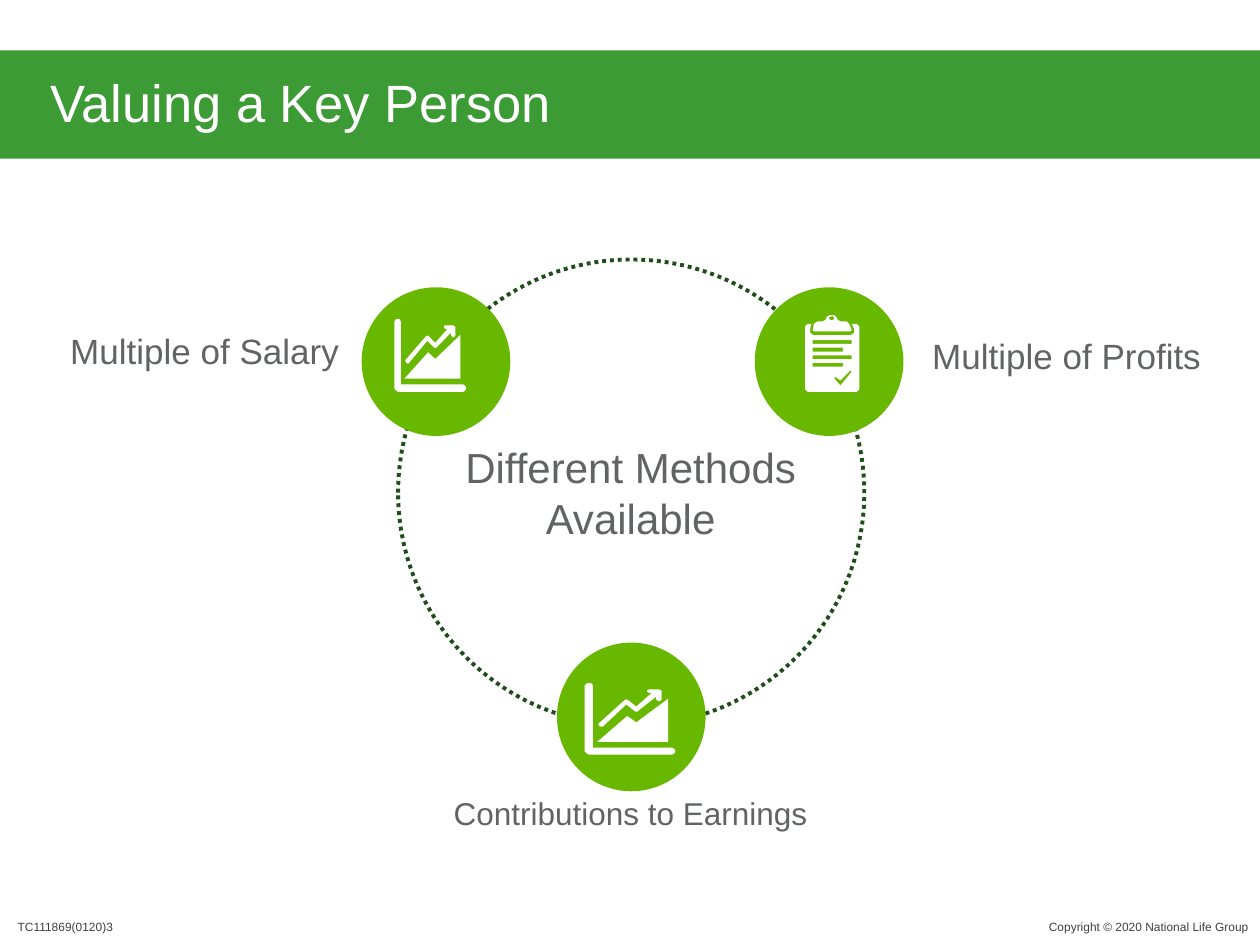
from dataclasses import dataclass

from pptx import Presentation
from pptx import util as u
from pptx.dml import color
from pptx.enum import dml, shapes, text


@dataclass(frozen=True)
class Theme:
    font: str = "Arial"
    banner: str = "3D9B35"
    ring: str = "1F4E1A"
    badge: str = "69B800"
    white: str = "FFFFFF"
    body: str = "616365"
    footer: str = "3F403C"
    title_size: float = 30
    centre_size: float = 24
    label_size: float = 20
    small_label_size: float = 18
    footer_size: float = 6.8


LEFT, CENTRE, RIGHT = text.PP_ALIGN.LEFT, text.PP_ALIGN.CENTER, text.PP_ALIGN.RIGHT
BADGE = 1.18

CHART_GRID = (100, 100)
AXES = [(0, 4), (2, 1), (5, 0), (8, 1), (9, 4), (9, 90), (96, 90), (99, 92),
        (100, 95), (99, 98), (96, 100), (5, 100), (2, 98), (0, 95)]
AREA = [(92, 22), (92, 82), (14, 82), (47, 46), (57, 55)]
TREND = [(71, 9), (82, 9), (85, 11), (85, 23), (82, 26), (79, 23), (79, 19),
         (58, 40), (56, 40), (46, 30), (20, 61), (17, 61), (15, 57), (44, 24),
         (46, 23), (48, 24), (57, 33), (74, 14), (71, 14), (69, 12), (69, 10)]
CHART = [[AXES], [AREA], [TREND]]

CLIPBOARD_GRID = (43, 61)
BOARD = [(41, 7), (37, 7), (39, 11), (39, 14), (38, 15), (36, 16), (7, 16), (5, 15),
         (4, 14), (4, 11), (5, 7), (2, 7), (0, 9), (0, 59), (2, 61), (41, 61),
         (43, 59), (43, 9)]
TEXT_LINES = [[(6, y), (end, y), (end, y + 3), (6, y + 3)]
              for y, end in zip(range(20, 44, 6), (37, 30, 37, 30))]
TICK = [(28, 56), (23, 50), (24, 49), (28, 52), (36, 44), (37, 45)]
CLIP = [(7, 13), (36, 13), (37, 12), (35, 7), (33, 5), (28, 5), (26, 4), (25, 2),
        (23, 0), (19, 0), (17, 2), (16, 4), (14, 5), (10, 5), (7, 7), (6, 12)]
CLIP_HOLE = [(21, 1), (22, 1), (23, 2), (23, 3), (22, 4), (20, 4), (19, 3), (19, 2)]
CLIPBOARD = [[BOARD, *TEXT_LINES, TICK, CLIP, CLIP_HOLE]]


def apply(target, values):
    """Set each named value on the target."""
    for name, value in values.items():
        setattr(target, name, value)


def inches(*lengths):
    """Convert lengths in inches to slide units."""
    return [u.Inches(length) for length in lengths]


class Deck:
    """Hold the theme and the current slide and draw its elements."""

    def __init__(self, theme):
        """Open a blank presentation with one title slide."""
        self.theme = theme
        self.show = Presentation()
        apply(self.show, {"slide_width": u.Inches(10), "slide_height": u.Inches(7.5)})
        self.slide = self.show.slides.add_slide(self.show.slide_layouts[5])
        self.canvas = self.slide.shapes

    def style(self, paragraph, size, ink, align=LEFT):
        """Format one paragraph."""
        paragraph.alignment = align
        apply(paragraph.font, {"name": self.theme.font, "size": u.Pt(size)})
        paragraph.font.color.rgb = color.RGBColor.from_string(ink)

    def fill(self, shape, ink):
        """Give a shape a plain fill without line or shadow."""
        shape.shadow.inherit = False
        shape.fill.solid()
        shape.fill.fore_color.rgb = color.RGBColor.from_string(ink)
        shape.line.fill.background()

    def title(self, wording, box):
        """Turn the title placeholder into a banner."""
        banner = self.slide.shapes.title
        apply(banner, dict(zip(("left", "top", "width", "height"), inches(*box))))
        self.fill(banner, self.theme.banner)
        frame = banner.text_frame
        frame.text = wording
        across, down = inches(0.4, 0.2)
        apply(frame, {"margin_left": across, "margin_right": across,
                      "margin_top": down, "margin_bottom": down, "word_wrap": True,
                      "auto_size": text.MSO_AUTO_SIZE.NONE,
                      "vertical_anchor": text.MSO_ANCHOR.BOTTOM})
        heading = frame.paragraphs[0]
        heading.line_spacing = 0.9
        self.style(heading, self.theme.title_size, self.theme.white)

    def label(self, wording, box, size, align=LEFT, wrap=True):
        """Add a body label centred vertically in its box."""
        frame = self.canvas.add_textbox(*inches(*box)).text_frame
        frame.text = wording
        apply(frame, {"word_wrap": wrap, "vertical_anchor": text.MSO_ANCHOR.MIDDLE})
        for paragraph in frame.paragraphs:
            self.style(paragraph, size, self.theme.body, align)

    def footer(self, wording, box, align=LEFT):
        """Add a small footer line without margins."""
        frame = self.canvas.add_textbox(*inches(*box)).text_frame
        frame.text = wording
        sides = ("left", "right", "top", "bottom")
        apply(frame, {f"margin_{side}": 0 for side in sides})
        frame.word_wrap = True
        self.style(frame.paragraphs[0], self.theme.footer_size, self.theme.footer, align)

    def ring(self, left, top, size):
        """Add the dotted circle that joins the badges."""
        circle = self.canvas.add_shape(shapes.MSO_SHAPE.OVAL, *inches(left, top, size, size))
        circle.shadow.inherit = False
        circle.fill.background()
        circle.line.color.rgb = color.RGBColor.from_string(self.theme.ring)
        apply(circle.line, {"width": u.Pt(2.25), "dash_style": dml.MSO_LINE.ROUND_DOT})

    def icon(self, pieces, grid, box):
        """Draw white outlines given on a grid scaled to a box."""
        left, top, width, height = box
        for contours in pieces:
            placed = [[inches(left + x * width / grid[0], top + y * height / grid[1])
                       for x, y in contour] for contour in contours]
            outline = self.canvas.build_freeform(*placed[0][0])
            for number, (start, *rest) in enumerate(placed):
                if number:
                    outline.move_to(*start)
                outline.add_line_segments(rest, close=True)
            self.fill(outline.convert_to_shape(), self.theme.white)

    def method(self, label, badge, icon):
        """Group a label, a round badge and its icon."""
        self.canvas = self.slide.shapes.add_group_shape().shapes
        self.label(**label)
        circle = self.canvas.add_shape(shapes.MSO_SHAPE.OVAL, *inches(*badge, BADGE, BADGE))
        self.fill(circle, self.theme.badge)
        self.icon(*icon)
        self.canvas = self.slide.shapes


def main():
    """Build the slide and save it."""
    theme = Theme()
    deck = Deck(theme)
    deck.title("Valuing a Key Person", (0, 0.4, 10, 0.86))
    deck.footer("TC111869(0120)3", (0.14, 7.3, 1.04, 0.11))
    deck.footer("Copyright © 2020 National Life Group", (7.66, 7.3, 2.25, 0.11), RIGHT)
    deck.ring(3.16, 2.06, 3.7)
    deck.label("Different Methods\nAvailable", (3.58, 3.45, 2.85, 0.91),
               theme.centre_size, CENTRE, wrap=False)
    deck.method({"wording": "Multiple of Profits", "box": (7.3, 2.6, 2.35, 0.44),
                 "size": theme.label_size, "wrap": False},
                (5.99, 2.28), (CLIPBOARD, CLIPBOARD_GRID, (6.39, 2.5, 0.43, 0.61)))
    deck.method({"wording": "Multiple of Salary", "box": (0, 2.56, 2.79, 0.44),
                 "size": theme.label_size, "align": RIGHT},
                (2.87, 2.28), (CHART, CHART_GRID, (3.13, 2.53, 0.57, 0.58)))
    deck.method({"wording": "Contributions to Earnings", "box": (3.47, 6.25, 3.07, 0.4),
                 "size": theme.small_label_size, "align": CENTRE},
                (4.42, 5.1), (CHART, CHART_GRID, (4.64, 5.42, 0.72, 0.57)))
    deck.show.save("out.pptx")


if __name__ == "__main__":
    main()
